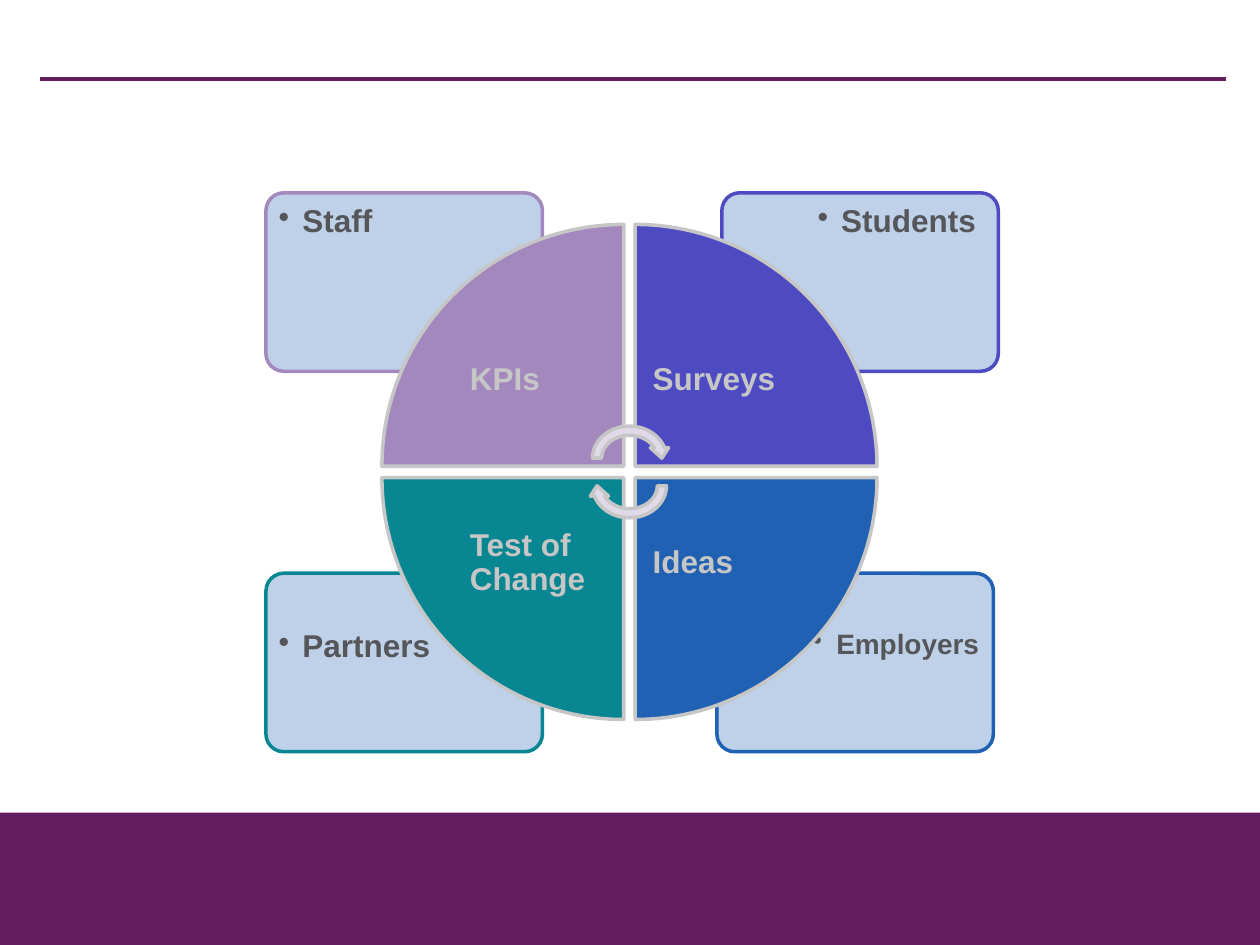
from pptx import Presentation
from pptx.dml.color import RGBColor
from pptx.enum import shapes, text
from pptx.oxml import parse_xml
from pptx.oxml.ns import nsdecls, qn
from pptx.util import Pt

PURPLE, SILVER, GREY = "641D5E", "C6C6C6", "56565A"
CARD_FILL, ARROW_FILL = "B8CCE6", "E0DAE8"

# column, row, card left, card caption, caption size, wedge label, colour, rotation
QUADRANTS = [
    (1, 1, 409.7, "Employers", 16, "Ideas", "2061B3", 180),
    (0, 1, 152, "Partners", 18, "Test of Change", "088692", 270),
    (1, 0, 412.5, "Students", 18, "Surveys", "4E4BC2", 90),
    (0, 0, 152, "Staff", 18, "KPIs", "A388BE", 0),
]
CENTRE_X, CENTRE_Y = 359.7, 269.7
WEDGE, GAP, LABEL = 138.2, 6.5, 98
CARD_W, CARD_H, CARD_TOPS = 158, 102, (110.2, 327.6)
CAPTION_W, CAPTION_H, CAPTION_MARGIN = 106, 72, 2.3
ARROW_W, ARROW_H, ARROW_SHIFT = 47.5, 41.8, 7.9

prs = Presentation()
prs.slide_width, prs.slide_height = Pt(720), Pt(540)
slide = prs.slides.add_slide(prs.slide_layouts[6])


def rgb(colour):
    return RGBColor.from_string(colour)


def add_block(kind, left, top, width, height, fill, line=None, rotation=0, opacity=100):
    block = slide.shapes.add_shape(kind, Pt(left), Pt(top), Pt(width), Pt(height))
    block.shadow.inherit = False
    block.rotation = rotation
    block.fill.solid()
    block.fill.fore_color.rgb = rgb(fill)
    if opacity < 100:
        colour = block._element.spPr.find(qn("a:solidFill"))[0]
        colour.append(parse_xml(f'<a:alpha {nsdecls("a")} val="{opacity * 1000}"/>'))
    if line:
        block.line.color.rgb = rgb(line)
        block.line.width = Pt(2)
    else:
        block.line.fill.background()
    return block


def add_text(words, left, top, width, height, size, colour, inset,
             anchor=text.MSO_ANCHOR.TOP, bullet_indent=0):
    box = slide.shapes.add_textbox(Pt(left), Pt(top), Pt(width), Pt(height))
    frame = box.text_frame
    frame.word_wrap = True
    frame.vertical_anchor = anchor
    frame.margin_left = frame.margin_right = Pt(inset)
    frame.margin_top = frame.margin_bottom = Pt(inset)
    paragraph = frame.paragraphs[0]
    paragraph.line_spacing = 0.9
    if bullet_indent:
        props = paragraph._p.get_or_add_pPr()
        props.set("marL", str(Pt(bullet_indent)))
        props.set("indent", str(-Pt(bullet_indent)))
        props.append(parse_xml(f'<a:buChar {nsdecls("a")} char="•"/>'))
    run = paragraph.add_run()
    run.text = words
    run.font.name, run.font.size, run.font.bold = "Arial", Pt(size), True
    run.font.color.rgb = rgb(colour)


def place(side, centre, size):
    """Start of a part that lies before (0) or after (1) the gap at the centre."""
    return centre + GAP / 2 if side else centre - GAP / 2 - size


def inside(side, start, outer, inner):
    """Start of a caption held against the outer edge of its card."""
    return start + (outer - inner - CAPTION_MARGIN if side else CAPTION_MARGIN)


add_block(shapes.MSO_SHAPE.RECTANGLE, 0, 464.4, 720, 75.6, PURPLE)
rule = slide.shapes.add_connector(shapes.MSO_CONNECTOR.STRAIGHT,
                                  Pt(23), Pt(45.2), Pt(700.4), Pt(45.2))
rule.line.color.rgb = rgb(PURPLE)
rule.line.width = Pt(2)
rule._element.spPr.append(parse_xml(f'<a:effectLst {nsdecls("a")}/>'))

for column, row, left, caption, size, _, colour, _ in QUADRANTS:
    top = CARD_TOPS[row]
    card = add_block(shapes.MSO_SHAPE.ROUNDED_RECTANGLE, left, top, CARD_W, CARD_H,
                     CARD_FILL, colour, opacity=90)
    card.adjustments[0] = 0.1
    add_text(caption, inside(column, left, CARD_W, CAPTION_W),
             inside(row, top, CARD_H, CAPTION_H), CAPTION_W, CAPTION_H,
             size, GREY, inset=5, bullet_indent=13.5)

for column, row, _, _, _, label, colour, rotation in QUADRANTS:
    add_block(shapes.MSO_SHAPE.PIE_WEDGE, place(column, CENTRE_X, WEDGE),
              place(row, CENTRE_Y, WEDGE), WEDGE, WEDGE, colour, SILVER, rotation)
    add_text(label, place(column, CENTRE_X, LABEL), place(row, CENTRE_Y, LABEL),
             LABEL, LABEL, 18, SILVER, inset=10, anchor=text.MSO_ANCHOR.MIDDLE)

for shift, rotation in ((-ARROW_SHIFT, 0), (ARROW_SHIFT, 180)):
    add_block(shapes.MSO_SHAPE.CIRCULAR_ARROW, CENTRE_X - ARROW_W / 2,
              CENTRE_Y + shift - ARROW_H / 2, ARROW_W, ARROW_H,
              ARROW_FILL, SILVER, rotation)

prs.save("out.pptx")
